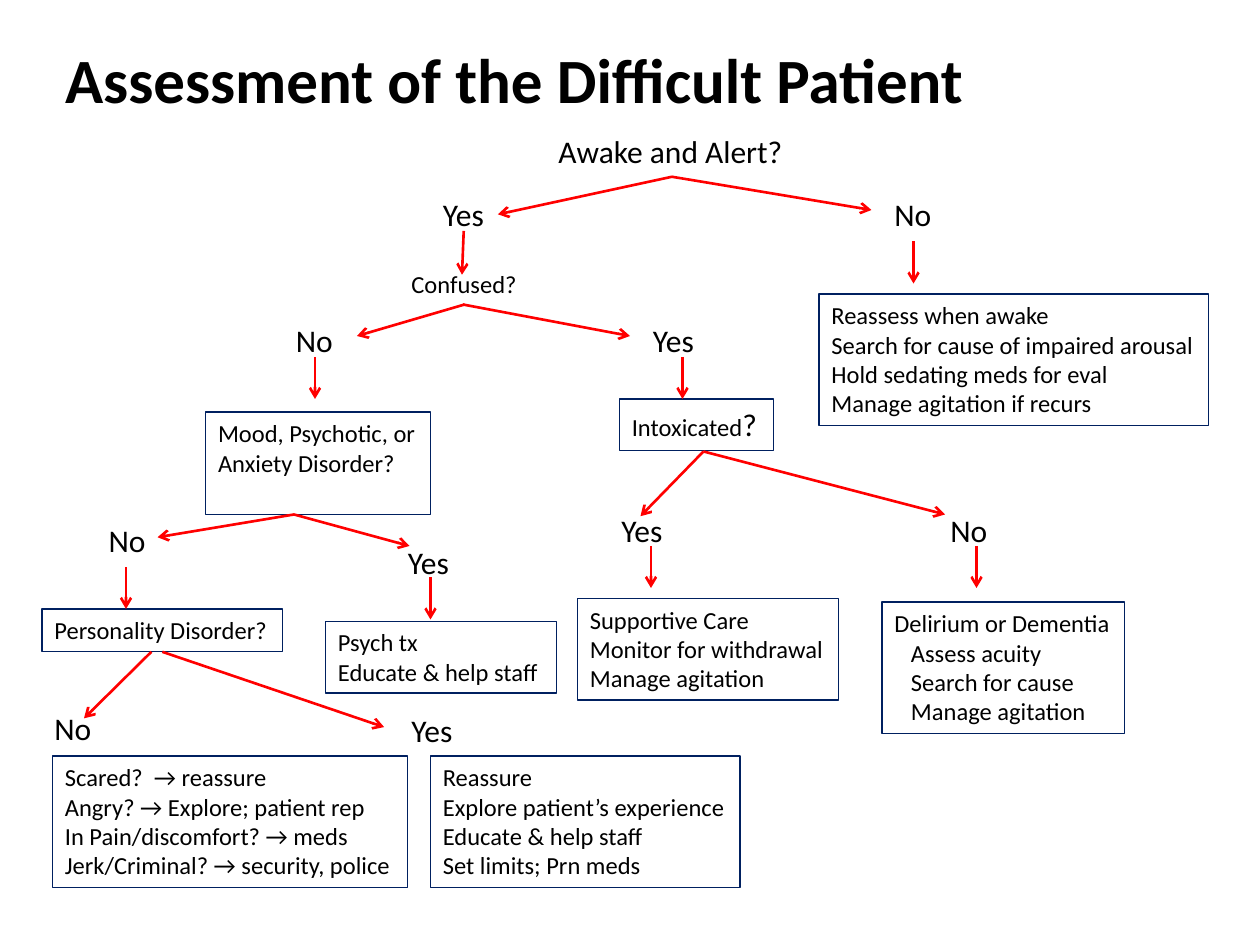
from dataclasses import dataclass

from lxml import etree
from pptx import Presentation
from pptx.dml.color import RGBColor
from pptx.enum.shapes import MSO_CONNECTOR, MSO_SHAPE
from pptx.enum.text import MSO_ANCHOR, MSO_AUTO_SIZE, PP_ALIGN
from pptx.oxml.ns import qn
from pptx.util import Pt

STRAIGHT = MSO_CONNECTOR.STRAIGHT
RECTANGLE = MSO_SHAPE.RECTANGLE
TOP = MSO_ANCHOR.TOP
MIDDLE = MSO_ANCHOR.MIDDLE
LEFT = PP_ALIGN.LEFT
FIXED = MSO_AUTO_SIZE.NONE

BLACK = RGBColor(0x00, 0x00, 0x00)
NAVY = RGBColor(0x00, 0x20, 0x60)
RED = RGBColor(0xFF, 0x00, 0x00)
FONT = "Calibri"
LABEL_SIZE = 18
BOX_SIZE = 14
STEP_INDENT = 9.5
BOTTOM_SIDE = 2


@dataclass(frozen=True)
class Label:
    text: str
    left: float
    top: float
    width: float
    size: float = LABEL_SIZE
    height: float = 29
    wrap: bool = False


@dataclass(frozen=True)
class Box:
    lines: tuple[str, ...]
    left: float
    top: float
    width: float
    height: float
    wrap: bool = False
    indent: float = 0


@dataclass(frozen=True)
class Arrow:
    start: tuple[float, float]
    end: tuple[float, float]
    source: Box | None = None


TITLE = "Assessment of the Difficult Patient"

LABELS = (
    Label("Awake and Alert?", 312, 72, 144),
    Label("Yes", 246, 108, 38),
    Label("No", 504, 108, 40),
    Label("Confused?", 228, 150, 75.6, BOX_SIZE, 24.2),
    Label("No", 162, 180, 36),
    Label("Yes", 366, 180, 43),
    Label("No", 55, 294, 35.5),
    Label("Yes", 226, 306.5, 50, wrap=True),
    Label("Yes", 348, 288.5, 60, wrap=True),
    Label("No", 536, 288.5, 40),
    Label("No", 24, 401.5, 35.5, wrap=True),
    Label("Yes", 228, 403, 39.6),
)

INTOXICATED = Box(("Intoxicated",), 354, 228, 88, 29.5)
PERSONALITY = Box(("Personality Disorder?",), 24, 348, 137.5, 24.5)
BOXES = (
    Box(("Mood, Psychotic, or", "Anxiety Disorder?"), 117.5, 235.5, 128.5, 58.5, True),
    INTOXICATED,
    Box(("Supportive Care", "Monitor for withdrawal", "Manage agitation"), 330, 342, 149, 58),
    Box(("Delirium or Dementia", "Assess acuity", "Search for cause", "Manage agitation"),
        504, 344, 138.5, 75, indent=STEP_INDENT),
    PERSONALITY,
    Box(("Psych tx", "Educate & help staff"), 186, 355, 132, 41, True),
    Box(("Scared?  → reassure", "Angry? → Explore; patient rep",
         "In Pain/discomfort? → meds", "Jerk/Criminal? → security, police"),
        30, 432, 203, 75),
    Box(("Reassure", "Explore patient’s experience", "Educate & help staff",
         "Set limits; Prn meds"), 246, 432, 177, 75),
    Box(("Reassess when awake", "Search for cause of impaired arousal",
         "Hold sedating meds for eval", "Manage agitation if recurs"), 468, 168, 222.5, 75),
)

ARROWS = (
    Arrow((384, 101), (284.5, 122.5)),
    Arrow((384, 101), (498, 120)),
    Arrow((265, 132), (264, 157)),
    Arrow((522, 138), (522, 162)),
    Arrow((265.5, 174), (204, 192)),
    Arrow((264.5, 174), (360, 192)),
    Arrow((180, 204), (180, 228)),
    Arrow((390, 204), (390, 228)),
    Arrow((168, 294), (90, 307)),
    Arrow((168, 294), (234, 312)),
    Arrow((402, 258), (366, 295)),
    Arrow((402, 258), (540, 294)),
    Arrow((72, 324), (72, 348)),
    Arrow((246, 330), (246, 354)),
    Arrow((372, 312), (372, 336)),
    Arrow((558, 312), (558, 336)),
    Arrow((86.5, 372.5), (48, 410.5)),
    Arrow((90, 372.5), (219.5, 415.5), PERSONALITY),
)


def write_lines(frame, lines: tuple[str, ...], size: float, wrap: bool, indent: float = 0) -> None:
    frame.auto_size = FIXED
    frame.word_wrap = wrap
    frame.vertical_anchor = TOP
    for index, line in enumerate(lines):
        para = frame.add_paragraph() if index else frame.paragraphs[0]
        para.text = line
        para.alignment = LEFT
        if index and indent:
            para._p.get_or_add_pPr().set("marL", str(Pt(indent)))
        para.font.name = FONT
        para.font.size = Pt(size)
        para.font.color.rgb = BLACK


def draw_title(page) -> None:
    title = page.shapes.title
    title.left, title.top, title.width, title.height = Pt(30), Pt(0), Pt(690), Pt(90)
    title.text_frame.text = TITLE
    title.text_frame.vertical_anchor = MIDDLE
    para = title.text_frame.paragraphs[0]
    para.alignment = LEFT
    para.font.name = FONT
    para.font.size = Pt(36)
    para.font.bold = True
    para.font.color.rgb = BLACK


def draw_label(page, label: Label) -> None:
    shape = page.shapes.add_textbox(
        Pt(label.left), Pt(label.top), Pt(label.width), Pt(label.height))
    write_lines(shape.text_frame, (label.text,), label.size, label.wrap)


def draw_box(page, box: Box):
    shape = page.shapes.add_shape(
        RECTANGLE, Pt(box.left), Pt(box.top), Pt(box.width), Pt(box.height))
    shape.shadow.inherit = False
    shape.fill.background()
    shape.line.color.rgb = NAVY
    shape.line.width = Pt(0.75)
    write_lines(shape.text_frame, box.lines, BOX_SIZE, box.wrap, box.indent)
    return shape


def draw_arrow(page, arrow: Arrow, shapes: dict) -> None:
    line = page.shapes.add_connector(STRAIGHT, *map(Pt, arrow.start + arrow.end))
    if arrow.source:
        line.begin_connect(shapes[arrow.source], BOTTOM_SIDE)
    line.line.color.rgb = RED
    line.line.width = Pt(1.5)
    etree.SubElement(line.line._get_or_add_ln(), qn("a:tailEnd"), type="arrow")
    etree.SubElement(line._element.spPr, qn("a:effectLst"))


def main() -> None:
    deck = Presentation()
    deck.slide_width, deck.slide_height = Pt(720), Pt(540)
    page = deck.slides.add_slide(deck.slide_layouts[5])
    draw_title(page)
    for label in LABELS:
        draw_label(page, label)
    shapes = {box: draw_box(page, box) for box in BOXES}
    question_mark = shapes[INTOXICATED].text_frame.paragraphs[0].add_run()
    question_mark.text = "?"
    question_mark.font.size = Pt(LABEL_SIZE)
    for arrow in ARROWS:
        draw_arrow(page, arrow, shapes)
    deck.save("out.pptx")


if __name__ == "__main__":
    main()
